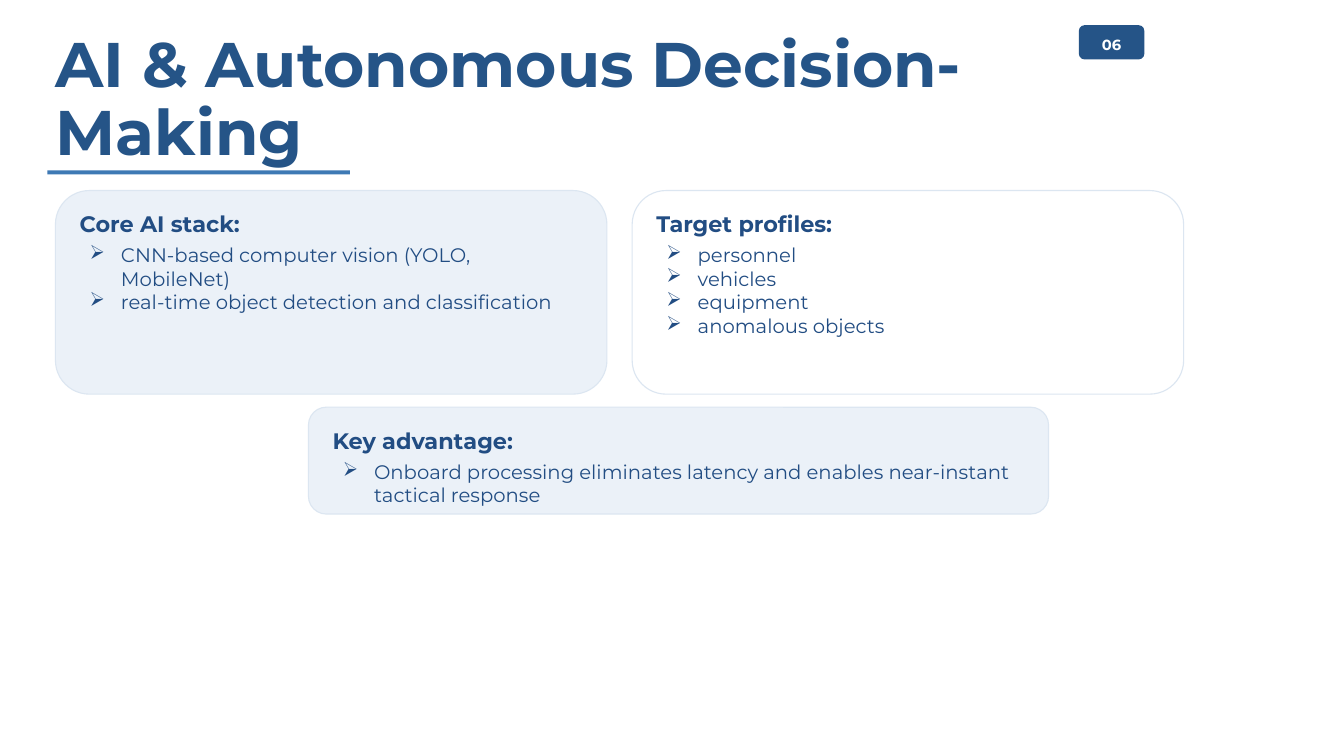
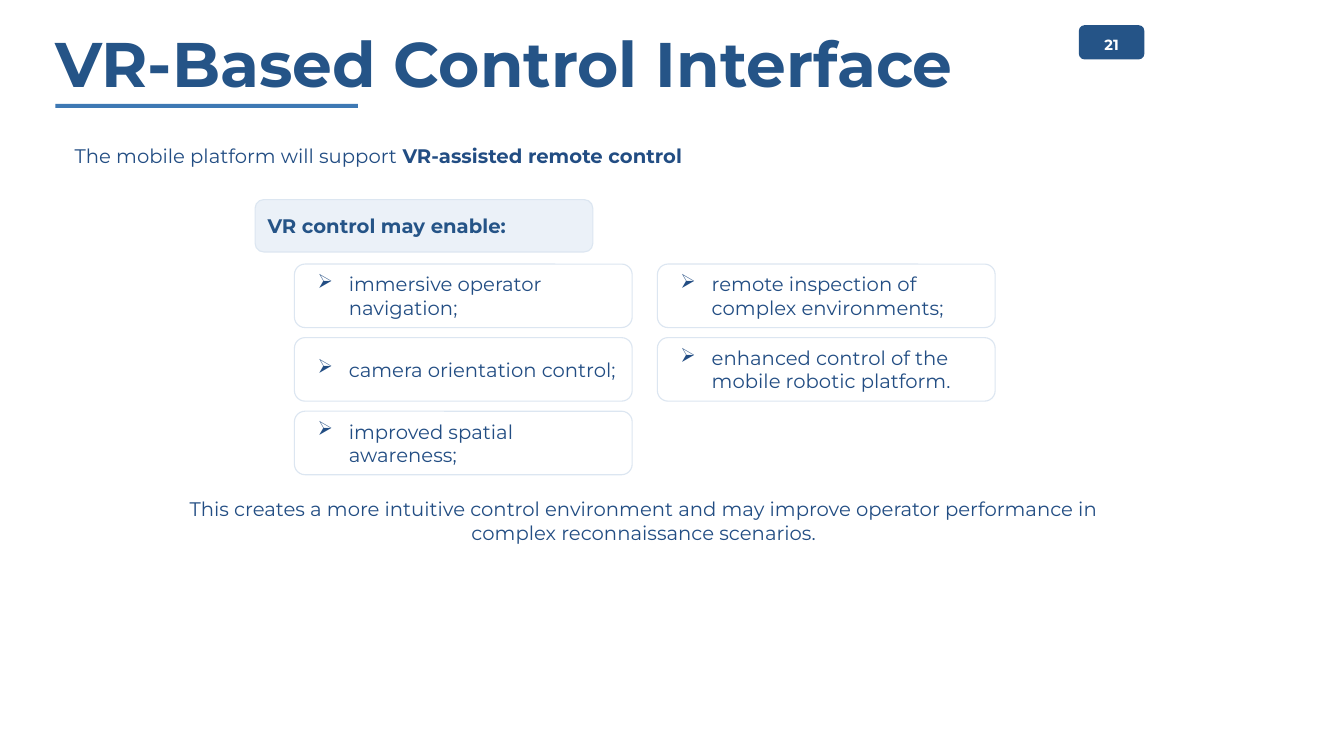
from dataclasses import dataclass
from typing import NamedTuple

from lxml.etree import SubElement
from pptx import Presentation
from pptx.dml.color import RGBColor
from pptx.enum.shapes import MSO_SHAPE
from pptx.enum.text import MSO_ANCHOR, MSO_AUTO_SIZE, PP_ALIGN
from pptx.oxml.ns import qn
from pptx.util import Inches, Pt


@dataclass(frozen=True)
class Theme:
    font: str = "Montserrat"
    primary: RGBColor = RGBColor(0x25, 0x54, 0x87)
    text: RGBColor = RGBColor(0x22, 0x4D, 0x83)
    accent: RGBColor = RGBColor(0x3E, 0x79, 0xB4)
    tint: RGBColor = RGBColor(0xEB, 0xF1, 0xF8)
    border: RGBColor = RGBColor(0xDC, 0xE6, 0xF1)
    white: RGBColor = RGBColor(0xFF, 0xFF, 0xFF)
    title_size: float = 45
    heading_size: float = 16
    body_size: float = 14
    badge_size: float = 10.5
    border_width: float = 0.8


class Box(NamedTuple):
    left: float
    top: float
    width: float
    height: float

    def emu(self):
        return [Inches(value) for value in self]


THEME = Theme()
TITLE_BOX = Box(0.55, 0.28, 9.85, 0.65)
BADGE_BOX = Box(10.7, 0.25, 0.65, 0.34)
TEXT_MARGINS = (0.12, 0.08, 0.12, 0.06)
CARD_PADDING = 0.12


def set_margins(frame, margins):
    """Set left, top, right and bottom margins in inches."""
    (frame.margin_left, frame.margin_top,
     frame.margin_right, frame.margin_bottom) = [Inches(m) for m in margins]


def format_paragraph(paragraph, size=THEME.body_size, color=THEME.text,
                     bold=False, alignment=PP_ALIGN.LEFT):
    paragraph.alignment = alignment
    font = paragraph.font
    font.name = THEME.font
    font.size = Pt(size)
    font.bold = bold
    font.color.rgb = color


def write_bullet(paragraph, text):
    paragraph.text = text
    properties = paragraph._p.get_or_add_pPr()
    properties.set("marL", str(Inches(0.41)))
    properties.set("indent", str(Inches(-0.31)))
    SubElement(properties, qn("a:buChar")).set("char", "➢")
    format_paragraph(paragraph)


def add_panel(slide, box, fill, border=None, preset=MSO_SHAPE.ROUNDED_RECTANGLE):
    shape = slide.shapes.add_shape(preset, *box.emu())
    shape.shadow.inherit = False
    shape.fill.solid()
    shape.fill.fore_color.rgb = fill
    if border is None:
        shape.line.fill.background()
    else:
        shape.line.color.rgb = border
        shape.line.width = Pt(THEME.border_width)
    shape.text_frame.vertical_anchor = MSO_ANCHOR.MIDDLE
    return shape


def add_text_frame(slide, box):
    frame = slide.shapes.add_textbox(*box.emu()).text_frame
    frame.word_wrap = True
    set_margins(frame, TEXT_MARGINS)
    return frame


def add_titled_slide(presentation, title, number, rule_left, rule_top):
    """Add a slide with its title, underline and number badge."""
    slide = presentation.slides.add_slide(presentation.slide_layouts[5])
    placeholder = slide.shapes.title
    (placeholder.left, placeholder.top,
     placeholder.width, placeholder.height) = TITLE_BOX.emu()
    frame = placeholder.text_frame
    frame.word_wrap = True
    frame.auto_size = MSO_AUTO_SIZE.NONE
    frame.vertical_anchor = MSO_ANCHOR.TOP
    set_margins(frame, (0, 0.05, 0, 0.05))
    frame.text = title
    paragraph = frame.paragraphs[0]
    paragraph.line_spacing = 0.9
    format_paragraph(paragraph, THEME.title_size, THEME.primary, True)

    badge = add_panel(slide, BADGE_BOX, THEME.primary).text_frame
    set_margins(badge, (0.08, 0.06, 0.08, 0.02))
    badge.text = number
    format_paragraph(badge.paragraphs[0], THEME.badge_size, THEME.white,
                     True, PP_ALIGN.CENTER)

    add_panel(slide, Box(rule_left, rule_top, 3, 0.04), THEME.accent,
              preset=MSO_SHAPE.RECTANGLE)
    return slide


def add_card(slide, box, fill, heading, bullets):
    """Add a rounded card holding a heading over a bullet list."""
    add_panel(slide, box, fill, THEME.border)
    frame = add_text_frame(slide, Box(
        box.left + CARD_PADDING, box.top + CARD_PADDING,
        box.width - 2 * CARD_PADDING, box.height - CARD_PADDING))
    frame.text = heading
    paragraph = frame.paragraphs[0]
    paragraph.space_after = Pt(4)
    format_paragraph(paragraph, THEME.heading_size, bold=True)
    for bullet in bullets:
        write_bullet(frame.add_paragraph(), bullet)


def add_feature_grid(slide, box, columns, column_gap=0.25, row_pitch=0.73):
    """Fill columns of bullet cells from the top left; box is the first cell."""
    for column, features in enumerate(columns):
        for row, feature in enumerate(features):
            cell = box._replace(left=box.left + column * (box.width + column_gap),
                                top=box.top + row * row_pitch)
            frame = add_panel(slide, cell, THEME.white, THEME.border).text_frame
            write_bullet(frame.paragraphs[0], feature)


def build_decision_slide(presentation):
    slide = add_titled_slide(presentation, "AI & Autonomous Decision-Making",
                             "06", 0.47, 1.69)
    stack_box = Box(0.55, 1.89, 5.47, 2.02)
    profiles_box = stack_box._replace(left=stack_box.left + stack_box.width + 0.25)
    add_card(slide, stack_box, THEME.tint, "Core AI stack:", [
        "CNN-based computer vision (YOLO, MobileNet)",
        "real-time object detection and classification",
    ])
    add_card(slide, profiles_box, THEME.white, "Target profiles:",
             ["personnel", "vehicles", "equipment", "anomalous objects"])
    add_card(slide, Box(3.06, 4.04, 7.34, 1.06), THEME.tint, "Key advantage:", [
        "Onboard processing eliminates latency and enables near-instant "
        "tactical response",
    ])


def build_control_slide(presentation):
    slide = add_titled_slide(presentation, "VR-Based Control Interface",
                             "21", 0.55, 1.03)
    intro = add_text_frame(slide, Box(0.62, 1.35, 6.55, 0.38)).paragraphs[0]
    intro.add_run().text = "The mobile platform will support "
    emphasis = intro.add_run()
    emphasis.text = "VR-assisted remote control"
    emphasis.font.bold = True
    format_paragraph(intro)

    label = add_panel(slide, Box(2.53, 1.98, 3.35, 0.52), THEME.tint,
                      THEME.border).text_frame
    label.text = "VR control may enable:"
    label.paragraphs[0].space_after = Pt(4)
    format_paragraph(label.paragraphs[0], color=THEME.primary, bold=True)

    add_feature_grid(slide, Box(2.92, 2.62, 3.35, 0.63), [
        ["immersive operator navigation;",
         "camera orientation control;",
         "improved spatial awareness;"],
        ["remote inspection of complex environments;",
         "enhanced control of the mobile robotic platform."],
    ])

    conclusion = add_text_frame(slide, Box(1.58, 4.85, 9.51, 0.61)).paragraphs[0]
    conclusion.text = (
        "This creates a more intuitive control environment and may improve "
        "operator performance in complex reconnaissance scenarios.")
    conclusion._p.get_or_add_pPr().set("marL", str(Inches(0.1)))
    format_paragraph(conclusion, alignment=PP_ALIGN.CENTER)


def main():
    presentation = Presentation()
    presentation.slide_width = Inches(13.33)
    presentation.slide_height = Inches(7.5)
    build_decision_slide(presentation)
    build_control_slide(presentation)
    presentation.save("out.pptx")


if __name__ == "__main__":
    main()
